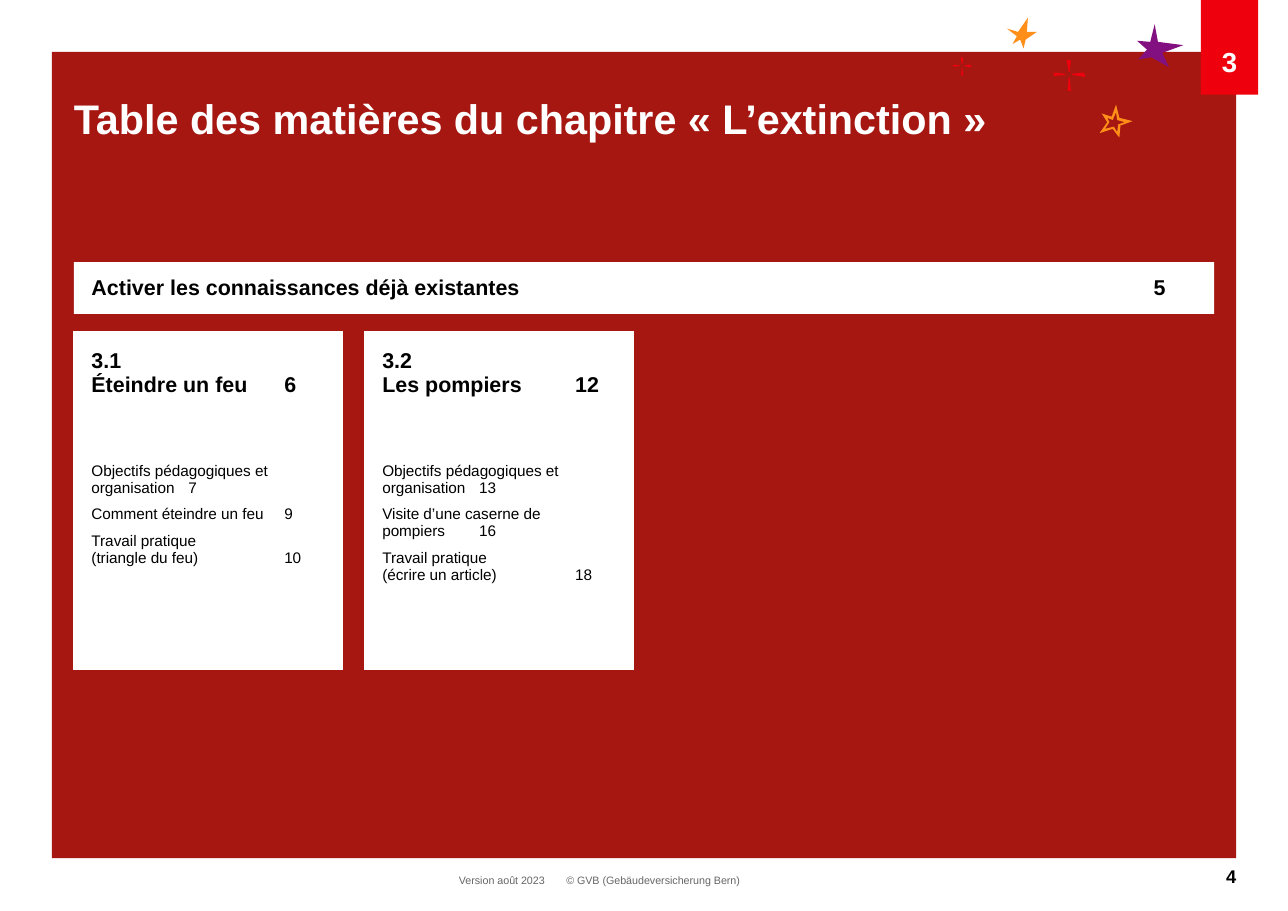
from lxml import etree
from pptx import Presentation
from pptx.dml.color import RGBColor
from pptx.enum.shapes import MSO_SHAPE
from pptx.enum.text import MSO_ANCHOR, PP_ALIGN
from pptx.oxml.ns import qn
from pptx.util import Inches, Pt

RECTANGLE = MSO_SHAPE.RECTANGLE
TOP, MIDDLE, BOTTOM = MSO_ANCHOR.TOP, MSO_ANCHOR.MIDDLE, MSO_ANCHOR.BOTTOM
LEFT, CENTER, RIGHT = PP_ALIGN.LEFT, PP_ALIGN.CENTER, PP_ALIGN.RIGHT

DARK_RED, RED, ORANGE, PURPLE = "A61711", "EE000C", "FF8F18", "831080"
WHITE, BLACK, GREY = "FFFFFF", "000000", "666666"

prs = Presentation()
prs.slide_width, prs.slide_height = Inches(11.69), Inches(8.27)
slide = prs.slides.add_slide(prs.slide_layouts[6])
shapes = slide.shapes


def paint(shape, color):
    shape.shadow.inherit = False
    shape.fill.solid()
    shape.fill.fore_color.rgb = RGBColor.from_string(color)
    shape.line.fill.background()


def write(paragraph, text, size, color=BLACK, bold=False, align=LEFT, after=0, tabs=()):
    paragraph.text = text
    paragraph.alignment = align
    paragraph.space_after = Pt(after)
    if tabs:
        props = paragraph._p.get_or_add_pPr()
        props.set("defTabSz", str(Inches(tabs[0])))
        tab_list = etree.SubElement(props, qn("a:tabLst"))
        for tab in tabs:
            etree.SubElement(tab_list, qn("a:tab"), pos=str(Inches(tab)), algn="l")
    for line_break in paragraph._p.findall(qn("a:br")):
        etree.SubElement(line_break, qn("a:rPr"), sz=str(size * 100))
    for run in paragraph.runs:
        for name, value in {"name": "Arial", "size": Pt(size), "bold": bold}.items():
            setattr(run.font, name, value)
        run.font.color.rgb = RGBColor.from_string(color)


# Red page panel
panel = shapes.add_shape(RECTANGLE, Inches(0.47), Inches(0.47), Inches(10.75), Inches(7.32))
paint(panel, DARK_RED)

# Stars and crosses: origin, inches per unit, colour, contours
arms = [
    [(0, -3), (-2, -14), (2, -13), (1, -3)],
    [(1, 3), (2, 15), (-1, 14), (0, 2)],
    [(3, -1), (14, -2), (15, 2), (3, 0)],
    [(-3, 0), (-13, 1), (-14, -2), (-3, -1)],
]
purple_star = [(12, 16), (0, 15), (9, 23), (1, 32), (13, 30), (29, 39), (23, 26),
               (42, 19), (19, 16), (16, 0)]
orange_star = [(5, 24), (12, 20), (15, 28), (17, 20), (27, 13), (18, 13), (19, 0),
               (10, 13), (0, 10), (9, 17)]
star_outer = [(18, 30), (12, 22), (0, 26), (7, 16), (2, 8), (11, 11), (15, 0), (18, 12),
              (30, 15), (19, 19)]
star_inner = [(13, 20), (16, 25), (17, 18), (23, 16), (16, 14), (15, 7), (12, 14),
              (7, 12), (9, 16), (5, 22)]
ornaments = [(10.32, 0.22, 1, PURPLE, [purple_star])]
ornaments += [(9.7, 0.68, 1, RED, [arm]) for arm in arms]
ornaments += [(9.14, 0.16, 1, ORANGE, [orange_star])]
ornaments += [(8.73, 0.6, 0.58, RED, [arm]) for arm in arms]
ornaments += [(9.98, 0.95, 1, ORANGE, [star_outer, star_inner])]
for x, y, zoom, color, contours in ornaments:
    builder = shapes.build_freeform(*contours[0][0], scale=zoom * Inches(0.01))
    builder.add_line_segments(contours[0][1:], close=True)
    for contour in contours[1:]:
        builder.move_to(*contour[0])
        builder.add_line_segments(contour[1:], close=True)
    paint(builder.convert_to_shape(Inches(x), Inches(y)), color)

# Chapter badge, summary bar, title and footer: box, fill, margins, anchor, text, format
labels = [
    ((10.9, 0, 0.52, 0.86), RED, (0, 0.4, 0, 0.15), BOTTOM, "3",
     {"size": 18, "color": WHITE, "bold": True, "align": CENTER}),
    ((0.67, 2.38, 10.35, 0.47), WHITE, (0.16, 0, 0, 0.02), MIDDLE,
     "Activer les connaissances déjà existantes\t5",
     {"size": 14, "bold": True, "tabs": [9.64]}),
    ((0.67, 0.85, 8.48, 0.58), None, (0, 0, 0, 0), TOP,
     "Table des matières du chapitre « L’extinction »",
     {"size": 27, "color": WHITE, "bold": True}),
    ((4.13, 7.93, 0.85, 0.13), None, (0, 0, 0, 0), TOP, "Version août 2023",
     {"size": 7, "color": GREY, "align": CENTER}),
    ((5.14, 7.93, 1.62, 0.12), None, (0, 0, 0, 0), TOP, "© GVB (Gebäudeversicherung Bern)",
     {"size": 7, "color": GREY}),
    ((10.51, 7.85, 0.71, 0.17), None, (0, 0, 0, 0), TOP, "4",
     {"size": 12, "bold": True, "align": RIGHT}),
]
for box, fill, margins, anchor, text, text_format in labels:
    box = [Inches(length) for length in box]
    if fill:
        label = shapes.add_shape(RECTANGLE, *box)
        paint(label, fill)
    else:
        label = shapes.add_textbox(*box)
    frame = label.text_frame
    frame.word_wrap = True
    frame.vertical_anchor = anchor
    for side, margin in zip(("left", "top", "right", "bottom"), margins):
        setattr(frame, f"margin_{side}", Inches(margin))
    write(frame.paragraphs[0], text, **text_format)

# Section cards
sections = [
    ("3.1\vÉteindre un feu\t6",
     ["Objectifs pédagogiques et organisation\t7",
      "Comment éteindre un feu\t9",
      "Travail pratique\v(triangle du feu)\t10"]),
    ("3.2\vLes pompiers\t12",
     ["Objectifs pédagogiques et organisation\t13",
      "Visite d’une caserne de\vpompiers\t16",
      "Travail pratique\v(écrire un article)\t18"]),
]
page_tabs = [0.88, 1.75]
for index, (heading, topics) in enumerate(sections):
    card = shapes.add_table(2, 1, Inches(0.67 + 2.64 * index), Inches(3.01),
                            Inches(2.44), Inches(3.07)).table
    card.first_row = card.horz_banding = False
    for row, height, top_margin in zip(card.rows, (1.14, 1.93), (0.16, 0.05)):
        row.height = Inches(height)
        cell = row.cells[0]
        cell.fill.solid()
        cell.fill.fore_color.rgb = RGBColor.from_string(WHITE)
        cell.margin_left, cell.margin_top = Inches(0.16), Inches(top_margin)
    write(card.cell(0, 0).text_frame.paragraphs[0], heading, 14, bold=True, tabs=page_tabs)
    topic_frame = card.cell(1, 0).text_frame
    for number, topic in enumerate(topics):
        paragraph = topic_frame.add_paragraph() if number else topic_frame.paragraphs[0]
        write(paragraph, topic, 10, after=6, tabs=page_tabs)

prs.save("out.pptx")
